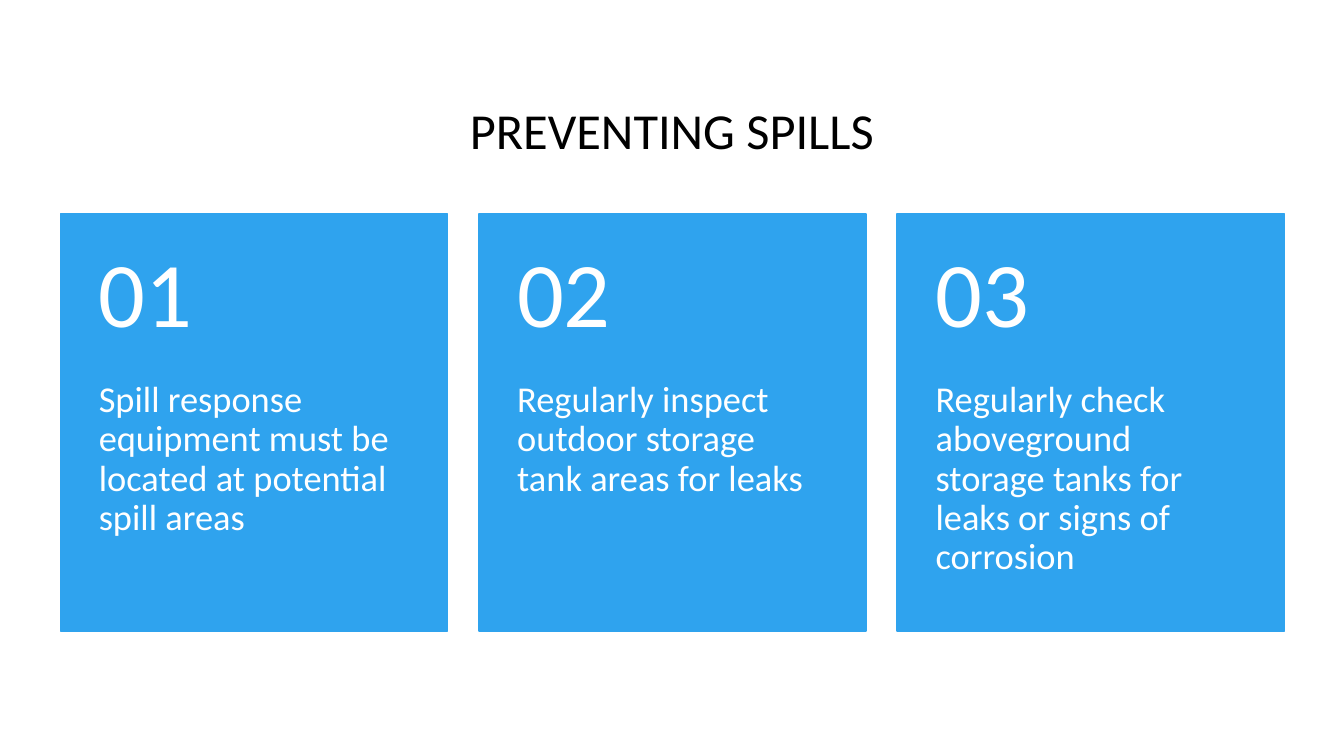
from pptx import Presentation
from pptx.dml.color import RGBColor
from pptx.enum import shapes, text
from pptx.util import Inches, Pt

TITLE = "PREVENTING SPILLS"
STEPS = [
    "Spill response equipment must be located at potential spill areas",
    "Regularly inspect outdoor storage tank areas for leaks",
    "Regularly check aboveground storage tanks for leaks or signs of corrosion",
]

BLUE = RGBColor(0x2F, 0xA3, 0xEE)
WHITE = RGBColor(0xFF, 0xFF, 0xFF)
BLACK = RGBColor(0x00, 0x00, 0x00)
FONT = "Calibri"

# Card grid, in inches
LEFT, TOP = 0.6, 2.12
CARD_WIDTH, CARD_HEIGHT = 3.84, 4.14
PITCH = 4.15
NUMBER_HEIGHT = 1.66
SIDE_INSET = 0.38


def write(shape, words, size, color, align, anchor):
    frame = shape.text_frame
    frame.word_wrap = True
    frame.auto_size = text.MSO_AUTO_SIZE.NONE
    frame.vertical_anchor = anchor
    paragraph = frame.paragraphs[0]
    paragraph.text = words
    paragraph.alignment = align
    paragraph.line_spacing = 0.9
    paragraph.space_before = Pt(0)
    paragraph.font.name = FONT
    paragraph.font.size = Pt(size)
    paragraph.font.color.rgb = color


def add_card_text(slide, words, left, top, height, size, anchor, inset_top, inset_bottom):
    box = slide.shapes.add_textbox(
        Inches(left), Inches(top), Inches(CARD_WIDTH), Inches(height))
    frame = box.text_frame
    frame.margin_left = frame.margin_right = Inches(SIDE_INSET)
    frame.margin_top, frame.margin_bottom = Inches(inset_top), Inches(inset_bottom)
    write(box, words, size, WHITE, text.PP_ALIGN.LEFT, anchor)


def add_card(slide, index, words):
    left = LEFT + index * PITCH
    card = slide.shapes.add_shape(
        shapes.MSO_SHAPE.RECTANGLE, Inches(left), Inches(TOP),
        Inches(CARD_WIDTH), Inches(CARD_HEIGHT))
    card.shadow.inherit = False
    card.fill.solid()
    card.fill.fore_color.rgb = BLUE
    card.line.color.rgb = BLUE
    card.line.width = Pt(1.25)

    add_card_text(slide, words, left, TOP + NUMBER_HEIGHT, CARD_HEIGHT - NUMBER_HEIGHT,
                  26, text.MSO_ANCHOR.TOP, 0, 0.36)
    add_card_text(slide, f"{index + 1:02}", left, TOP, NUMBER_HEIGHT,
                  66, text.MSO_ANCHOR.MIDDLE, 0.18, 0.18)


def main():
    presentation = Presentation()
    presentation.slide_width = Inches(13.33)
    presentation.slide_height = Inches(7.5)
    slide = presentation.slides.add_slide(presentation.slide_layouts[5])

    # Title
    title = slide.shapes.title
    title.left, title.top = Inches(LEFT), Inches(0.25)
    title.width, title.height = Inches(12.13), Inches(2.14)
    write(title, TITLE, 36, BLACK, text.PP_ALIGN.CENTER, text.MSO_ANCHOR.MIDDLE)

    # Numbered cards
    for index, words in enumerate(STEPS):
        add_card(slide, index, words)

    presentation.save("out.pptx")


if __name__ == "__main__":
    main()
